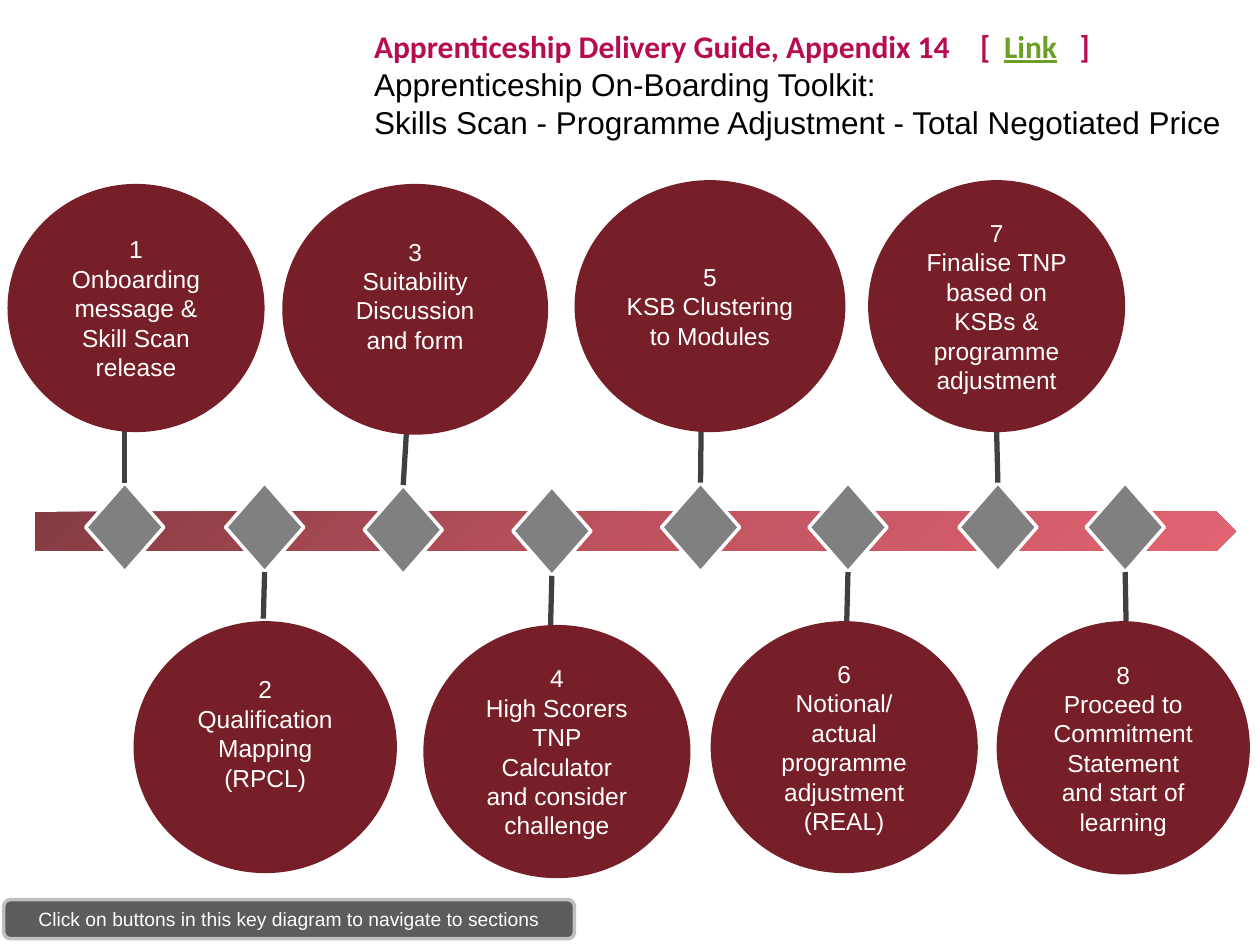
import pptx
import pptx.util
import pptx.dml.color
import pptx.enum.shapes
import pptx.enum.text
import pptx.oxml
import pptx.oxml.ns
from lxml import etree

Inch, Pt = pptx.util.Inches, pptx.util.Pt
Kind = pptx.enum.shapes.MSO_SHAPE
Align = pptx.enum.text.PP_ALIGN
A = pptx.oxml.ns.nsdecls("a")

THEME = {
    "disc": "771F28", "node": "808080", "stem": "404040", "white": "FFFFFF",
    "bar": ((0, "853B43"), (50, "BE535F"), (100, "E16371")),
    "note": "595959", "edge": "BFBFBF",
    "title": "B70D50", "link": "6B9F25", "black": "000000",
    "font": "Arial", "head": "Calibri",
    "title_pt": 18, "step_pt": 14, "note_pt": 11,
    "stem_pt": 3, "edge_pt": 2,
}

# Odd steps sit above the bar, even steps below:
# text, disc box, node corner, outer end of stem, blank lines kept under text
STEPS = [
    ("Onboarding message & Skill Scan release",
     (0.06, 1.46, 2.04, 1.97), (0.68, 3.83), (0.99, 3.04), 0),
    ("Qualification Mapping (RPCL)",
     (1.06, 4.93, 2.09, 2), (1.79, 3.83), (2.09, 4.91), 1),
    ("Suitability Discussion and form",
     (2.24, 1.46, 2.11, 1.99), (2.89, 3.85), (3.24, 3.2), 1),
    ("High Scorers TNP\vCalculator\nand consider challenge",
     (3.36, 4.96, 2.12, 2.01), (4.07, 3.86), (4.37, 4.96), 0),
    ("KSB Clustering to Modules",
     (4.56, 1.43, 2.15, 2), (5.25, 3.83), (5.57, 2.88), 0),
    ("Notional/ actual programme adjustment (REAL)",
     (5.64, 4.93, 2.12, 2), (6.42, 3.83), (6.72, 4.95), 0),
    ("Finalise TNP based on KSBs & programme adjustment",
     (6.89, 1.43, 2.04, 2), (7.61, 3.83), (7.91, 3.43), 0),
    ("Proceed to Commitment Statement and start of learning",
     (7.91, 4.93, 2.01, 2.01), (8.62, 3.83), (8.94, 5.09), 0),
]
NODE = (0.62, 0.71)
LINE = 0.22  # height of one line of step text

HEAD = [("Apprenticeship Delivery Guide, Appendix 14\t[\t", "title"),
        ("Link", "link"), ("\t]", "title")]
TABS = (4.81, 5.0, 5.6)
TITLE = ["Apprenticeship On-Boarding Toolkit:",
         "Skills Scan - Programme Adjustment - Total Negotiated Price"]
NOTE = "Click on buttons in this key diagram to navigate to sections"


def rgb(name):
    return pptx.dml.color.RGBColor.from_string(THEME[name])


def style(font, size, color, face="font"):
    font.name, font.size = THEME[face], Pt(THEME[size])
    font.color.rgb = rgb(color)


def add(slide, kind, box, fill, edge=None):
    shape = slide.shapes.add_shape(kind, *map(Inch, box))
    shape.shadow.inherit = False
    shape.fill.solid()
    shape.fill.fore_color.rgb = rgb(fill)
    if edge:
        shape.line.color.rgb = rgb(edge)
        shape.line.width = Pt(THEME["edge_pt"])
    else:
        shape.line.fill.background()
    return shape


def write(shape, text, size):
    frame = shape.text_frame
    frame.word_wrap = True
    frame.vertical_anchor = pptx.enum.text.MSO_ANCHOR.MIDDLE
    frame.text = text
    for para in frame.paragraphs:
        para.alignment = Align.CENTER
        style(para.font, size, "white")


def grade(shape):
    stops = "".join(f'<a:gs pos="{pos * 1000}"><a:srgbClr val="{color}"/></a:gs>'
                    for pos, color in THEME["bar"])
    grad = pptx.oxml.parse_xml(
        f'<a:gradFill {A} rotWithShape="1"><a:gsLst>{stops}</a:gsLst>'
        '<a:lin ang="2700000" scaled="0"/></a:gradFill>')
    props = shape.fill._xPr
    props.replace(props.find(pptx.oxml.ns.qn("a:solidFill")), grad)


def stem(slide, start, node, site):
    x, y = map(Inch, start)
    line = slide.shapes.add_connector(
        pptx.enum.shapes.MSO_CONNECTOR.STRAIGHT, x, y, x, y)
    line.end_connect(node, site)
    line.line.color.rgb = rgb("stem")
    line.line.width = Pt(THEME["stem_pt"])
    etree.SubElement(line._element.spPr, pptx.oxml.ns.qn("a:effectLst"))


def title(slide):
    box = slide.shapes.add_textbox(*map(Inch, (2.87, -0.14, 7.02, 1.61)))
    frame = box.text_frame
    frame.word_wrap = True
    frame.vertical_anchor = pptx.enum.text.MSO_ANCHOR.MIDDLE
    head = frame.paragraphs[0]
    tabs = etree.SubElement(head._p.get_or_add_pPr(),
                            pptx.oxml.ns.qn("a:tabLst"))
    for stop in TABS:
        etree.SubElement(tabs, pptx.oxml.ns.qn("a:tab"),
                         pos=str(Inch(stop)), algn="l")
    for text, color in HEAD:
        run = head.add_run()
        run.text = text
        style(run.font, "title_pt", color, "head")
        run.font.bold = True
        run.font.underline = color == "link"
    for text in TITLE:
        para = frame.add_paragraph()
        para.text = text
        style(para.font, "title_pt", "black")


def main():
    deck = pptx.Presentation()
    deck.slide_width, deck.slide_height = Inch(10), Inch(7.5)
    slide = deck.slides.add_slide(deck.slide_layouts[6])

    # Timeline bar
    grade(add(slide, Kind.PENTAGON, (0.28, 4.06, 9.53, 0.31), "node"))

    # Nodes and stems, behind the discs
    for i, (_, _, spot, start, _) in enumerate(STEPS):
        node = add(slide, Kind.DIAMOND, spot + NODE, "node", "white")
        stem(slide, start, node, 2 if i % 2 else 0)

    # Numbered discs
    for i, (text, box, _, _, gap) in enumerate(STEPS, 1):
        disc = add(slide, Kind.OVAL, box, "disc")
        write(disc, f"{i}\n{text}", "step_pt")
        disc.text_frame.margin_bottom = Inch(0.05 + gap * LINE)

    # Hint at the foot
    note = add(slide, Kind.ROUNDED_RECTANGLE, (0.03, 7.14, 4.53, 0.31),
               "note", "edge")
    write(note, NOTE, "note_pt")
    tint = note.fill._xPr.find(".//" + pptx.oxml.ns.qn("a:srgbClr"))
    etree.SubElement(tint, pptx.oxml.ns.qn("a:alpha"), val="98000")

    title(slide)
    deck.save("out.pptx")


if __name__ == "__main__":
    main()
